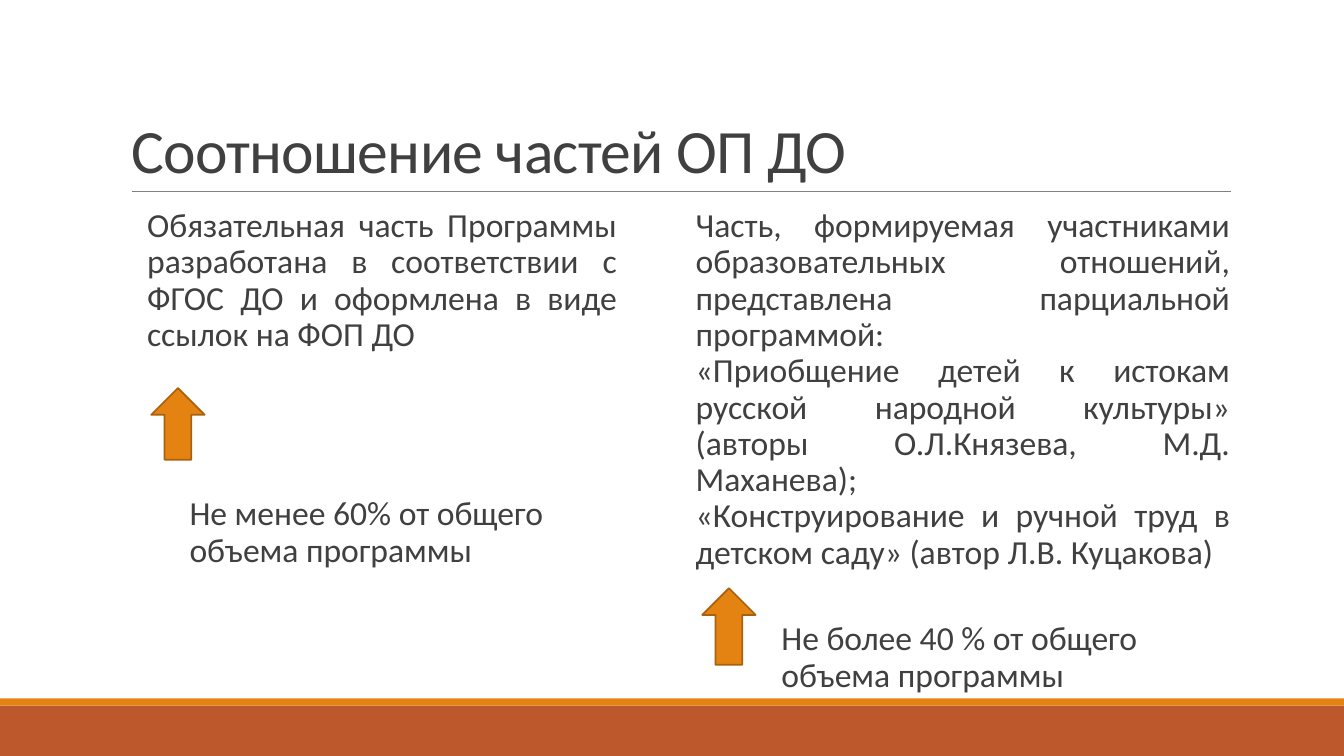
from lxml import etree
from pptx import Presentation
from pptx.dml.color import RGBColor
from pptx.enum.shapes import MSO_CONNECTOR, MSO_SHAPE
from pptx.enum.text import MSO_ANCHOR, MSO_AUTO_SIZE, PP_ALIGN
from pptx.oxml.ns import qn
from pptx.util import Inches, Pt

RECTANGLE = MSO_SHAPE.RECTANGLE
RIGHT_ARROW = MSO_SHAPE.RIGHT_ARROW
STRAIGHT = MSO_CONNECTOR.STRAIGHT
TOP, BOTTOM = MSO_ANCHOR.TOP, MSO_ANCHOR.BOTTOM
LEFT, JUSTIFY = PP_ALIGN.LEFT, PP_ALIGN.JUSTIFY
NO_AUTOFIT = MSO_AUTO_SIZE.NONE

COLORS = {
    "text": "404040",
    "rule": "808080",
    "orange": "E48312",
    "rust": "BD582C",
    "outline": "A9610D",
}


class SlideBuilder:
    """Holds the style and the current slide."""

    font_name = "Calibri"
    body_size = 24
    title_size = 44

    def __init__(self, slide):
        self.slide = slide

    def color(self, name):
        return RGBColor.from_string(COLORS[name])

    def place(self, shape, box):
        shape.left, shape.top, shape.width, shape.height = map(Inches, box)

    def add_run(self, paragraph, text, size):
        run = paragraph.add_run()
        run.text = text
        run.font.name = self.font_name
        run.font.size = Pt(size)
        run.font.color.rgb = self.color("text")
        return run

    def title(self, shape, box, text):
        self.place(shape, box)
        frame = shape.text_frame
        frame.auto_size = NO_AUTOFIT
        frame.vertical_anchor = BOTTOM
        paragraph = frame.paragraphs[0]
        paragraph.alignment = LEFT
        paragraph.line_spacing = 0.85
        run = self.add_run(paragraph, text, self.title_size)
        run.font._element.set("spc", "-50")

    def body(self, shape, box, texts, alignment=JUSTIFY):
        self.place(shape, box)
        frame = shape.text_frame
        frame.word_wrap = True
        frame.auto_size = NO_AUTOFIT
        frame.vertical_anchor = TOP
        frame.margin_left = frame.margin_right = 0
        frame.margin_top = frame.margin_bottom = Inches(0.05)
        for index, text in enumerate(texts):
            paragraph = frame.add_paragraph() if index else frame.paragraphs[0]
            paragraph.alignment = alignment
            paragraph.line_spacing = 0.9
            paragraph.space_before = paragraph.space_after = Pt(0)
            properties = paragraph._p.get_or_add_pPr()
            properties.set("marL", str(Inches(0.1)))
            properties.set("indent", "0")
            etree.SubElement(properties, qn("a:buNone"))
            self.add_run(paragraph, text, self.body_size)

    def note(self, box, text):
        shape = self.slide.shapes.add_textbox(*map(Inches, box))
        self.body(shape, box, [text], LEFT)

    def shape(self, kind, box, fill):
        shape = self.slide.shapes.add_shape(kind, *map(Inches, box))
        shape.shadow.inherit = False
        shape.fill.solid()
        shape.fill.fore_color.rgb = self.color(fill)
        shape.line.fill.background()
        return shape

    def up_arrow(self, box):
        arrow = self.shape(RIGHT_ARROW, box, "orange")
        arrow.rotation = 270
        arrow.line.color.rgb = self.color("outline")
        arrow.line.width = Pt(1.25)

    def rule(self, left, right, top):
        line = self.slide.shapes.add_connector(
            STRAIGHT, Inches(left), Inches(top), Inches(right), Inches(top))
        line.line.color.rgb = self.color("rule")
        line.line.width = Pt(0.5)
        etree.SubElement(line._element.spPr, qn("a:effectLst"))


def main():
    presentation = Presentation()
    presentation.slide_width = Inches(13.33)
    presentation.slide_height = Inches(7.5)
    # Two Content layout: a title and two body placeholders
    slide = presentation.slides.add_slide(presentation.slide_layouts[3])
    title, left_body, right_body = slide.placeholders
    builder = SlideBuilder(slide)

    # Bottom bands and title rule
    builder.shape(RECTANGLE, (0, 7, 13.33, 0.5), "rust")
    builder.shape(RECTANGLE, (0, 6.93, 13.33, 0.07), "orange")
    builder.rule(1.31, 12.21, 1.9)

    # Title
    builder.title(title, (1.2, 0.31, 11, 1.59), "Соотношение частей ОП ДО")

    # Mandatory part
    builder.body(left_body, (1.36, 2.02, 4.76, 1.83), [
        "Обязательная часть Программы разработана в соответствии с "
        "ФГОС ДО и оформлена в виде ссылок на ФОП ДО",
    ])
    builder.up_arrow((1.41, 3.94, 0.71, 0.53))
    builder.note((1.78, 4.88, 4.17, 0.95),
                 "Не менее 60% от общего объема программы")

    # Part formed by the participants
    builder.body(right_body, (6.8, 2.02, 5.4, 2.97), [
        "Часть, формируемая участниками образовательных отношений, "
        "представлена парциальной программой:",
        "«Приобщение детей к истокам русской народной культуры» "
        "(авторы О.Л.Князева, М.Д. Маханева);",
        "«Конструирование и ручной труд в детском саду» "
        "(автор Л.В. Куцакова)",
    ])
    builder.up_arrow((6.85, 5.95, 0.76, 0.53))
    builder.note((7.65, 6.12, 4.17, 0.94),
                 "Не более 40 % от общего объема программы")

    presentation.save("out.pptx")


if __name__ == "__main__":
    main()
